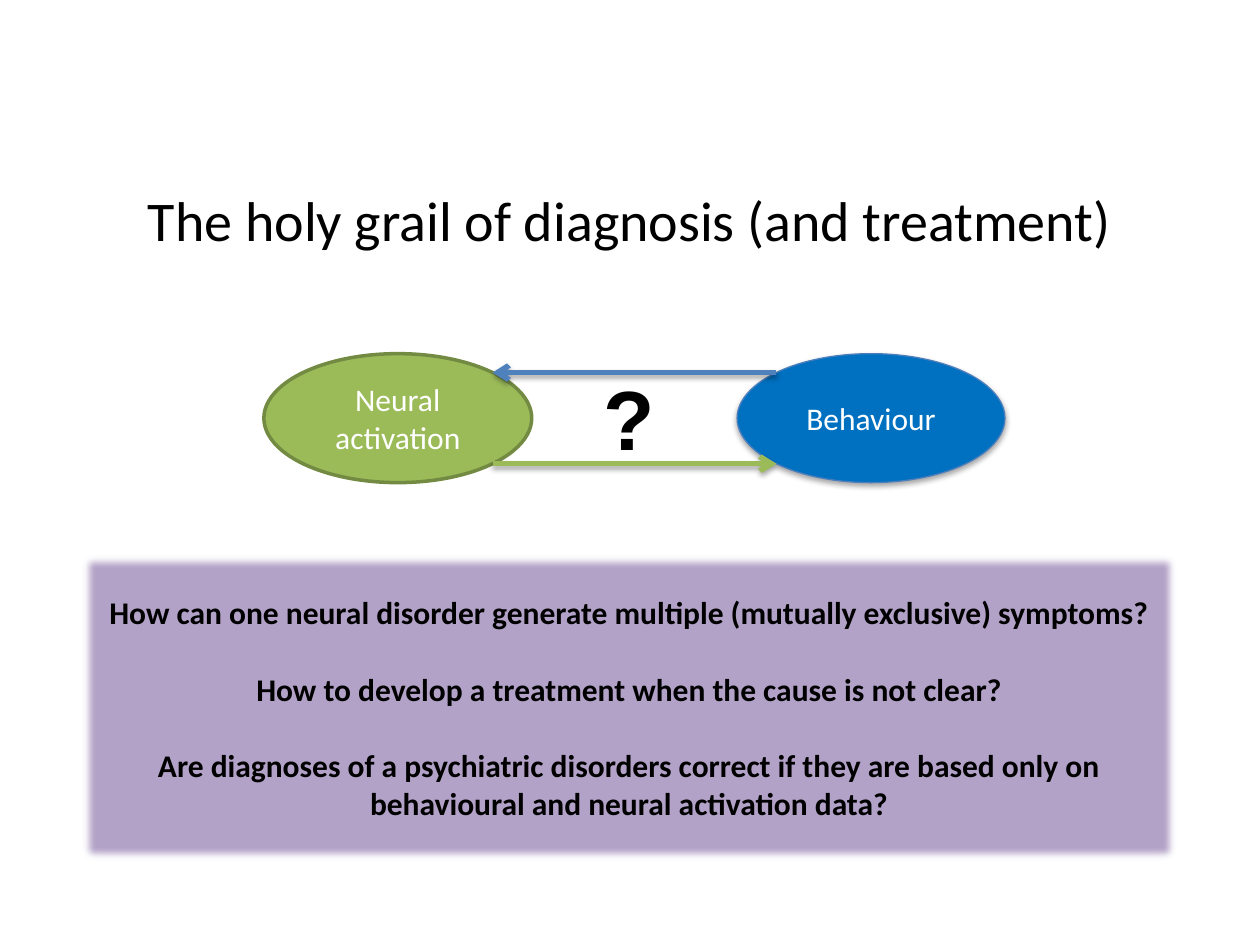
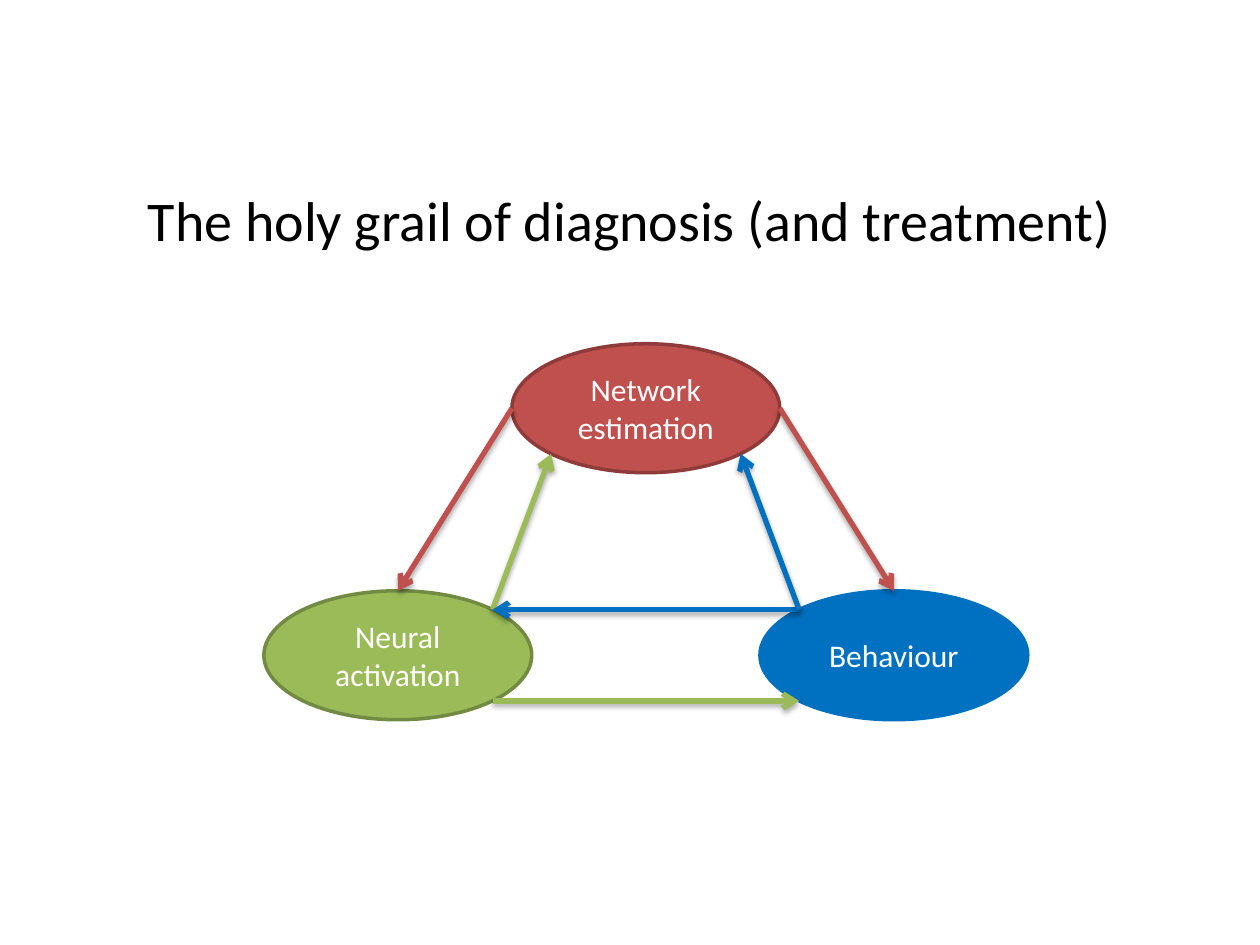
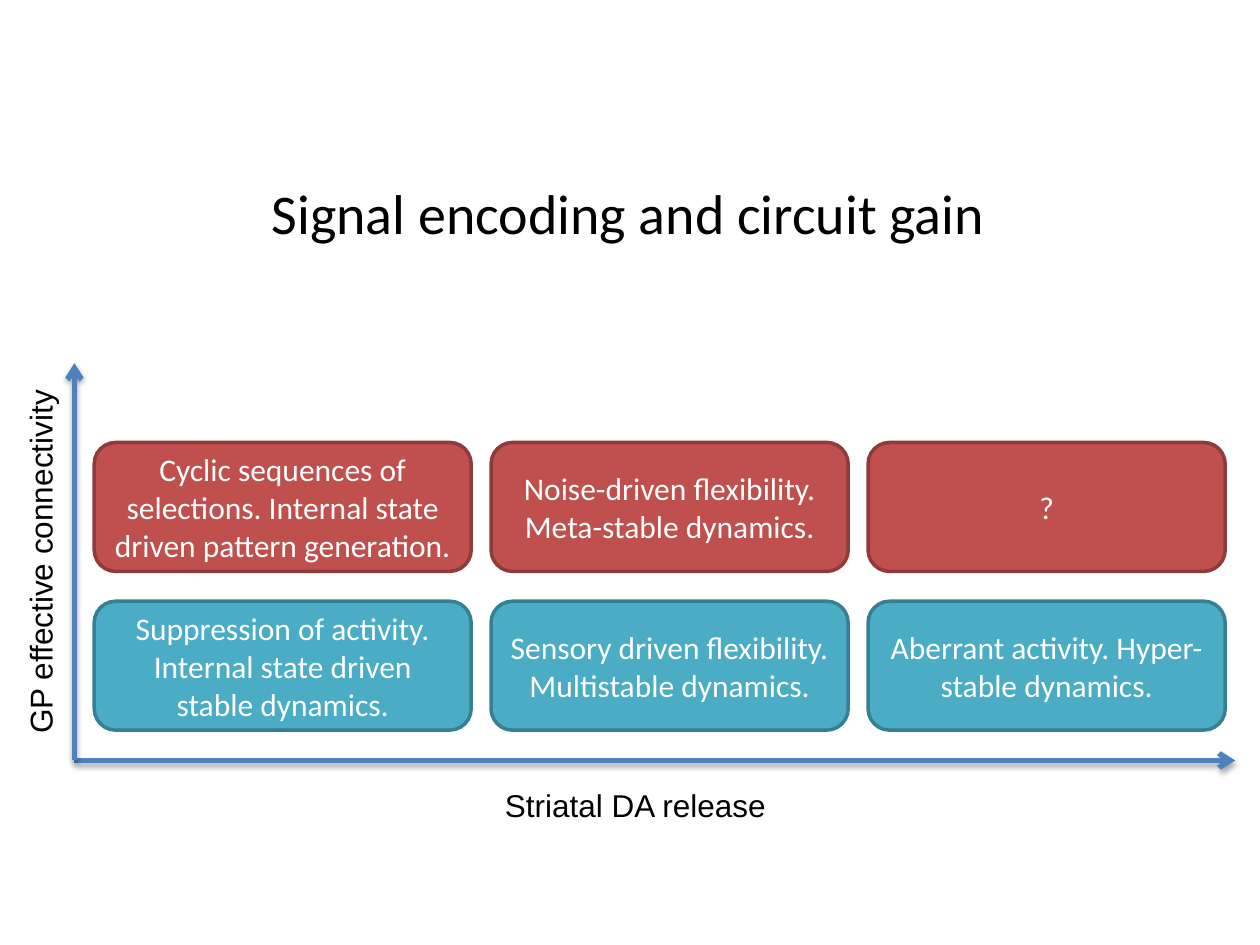
from lxml import etree
from pptx import Presentation
from pptx.dml.color import RGBColor
from pptx.enum.shapes import MSO_CONNECTOR, MSO_SHAPE
from pptx.enum.text import MSO_ANCHOR, PP_ALIGN
from pptx.oxml.ns import qn
from pptx.util import Cm, Pt

OVAL = MSO_SHAPE.OVAL
RECT = MSO_SHAPE.RECTANGLE
ROUND = MSO_SHAPE.ROUNDED_RECTANGLE
STRAIGHT = MSO_CONNECTOR.STRAIGHT
CENTER = PP_ALIGN.CENTER
TOP, MIDDLE = MSO_ANCHOR.TOP, MSO_ANCHOR.MIDDLE

BLACK, WHITE, LILAC = "000000", "FFFFFF", "B3A2C7"
BLUE, STEEL = "0070C0", "4F81BD"
GREEN, MOSS = "9BBB59", "738A42"
RED, WINE = "C0504D", "8E3B39"
TEAL, DEEP = "4BACC6", "377F92"

# All lengths are in centimetres
GRAIL = "The holy grail of diagnosis (and treatment)"
GRAIL_BOX = (1.27, 3.1, 22.86, 2.62)
GAIN = "Signal encoding and circuit gain"
GAIN_BOX = (0.91, 2.51, 23.52, 3.53)

ASKS = [
    "How can one neural disorder generate multiple (mutually exclusive) symptoms?",
    "How to develop a treatment when the cause is not clear?",
    "Are diagnoses of a psychiatric disorders correct if they are based only on "
    "behavioural and neural activation data?",
]

# Ovals: name -> lines of text, fill, edge
NODES = {
    "neural": (["Neural activation"], GREEN, MOSS),
    "behave": (["Behaviour"], BLUE, BLUE),
    "net": (["Network", "estimation"], RED, WINE),
}
NODE_W, NODE_H = 5.4, 2.6

# Centres of the ovals, then arrows: from, side, to, side, colour
PAIR = {"behave": (17.56, 8.43), "neural": (8.02, 8.43)}
PAIR_LINKS = [
    ("neural", "se", "behave", "sw", GREEN),
    ("behave", "nw", "neural", "ne", STEEL),
]
TRIO = {"net": (13.02, 8.23), "neural": (8.02, 13.21), "behave": (18.02, 13.21)}
TRIO_LINKS = [
    ("neural", "ne", "net", "sw", GREEN),
    ("neural", "se", "behave", "sw", GREEN),
    ("behave", "nw", "neural", "ne", BLUE),
    ("behave", "nw", "net", "se", BLUE),
    ("net", "w", "neural", "n", RED),
    ("net", "e", "behave", "n", RED),
]
DIAG = 0.5 ** 0.5
SIDES = {
    "n": (0, -1), "e": (1, 0), "w": (-1, 0),
    "ne": (DIAG, -DIAG), "nw": (-DIAG, -DIAG),
    "se": (DIAG, DIAG), "sw": (-DIAG, DIAG),
}

# Grid of states: fill, edge, cells
ROWS = [
    (RED, WINE, [
        "Cyclic sequences of selections. Internal state driven pattern generation.",
        "Noise-driven flexibility. Meta-stable dynamics.",
        "?",
    ]),
    (TEAL, DEEP, [
        "Suppression of activity. Internal state driven stable dynamics.",
        "Sensory driven flexibility. Multistable dynamics.",
        "Aberrant activity. Hyper-stable dynamics.",
    ]),
]
COLS = [7.6, 7.2, 7.2]
GRID_X, GRID_Y, CELL_H = 1.9, 8.92, 2.6
GAP_X, GAP_Y = 0.4, 0.6
ORIGIN = (1.5, 15.33)
AXES = [(24.9, 15.33), (1.5, 7.32)]
LABELS = [
    ("Striatal DA release", (9.91, 15.73, 5.8, 1.02), 0),
    ("GP effective connectivity", (-2.95, 10.82, 7.52, 1.02), 270),
]


def rgb(code):
    return RGBColor.from_string(code)


def cms(vals):
    return [Cm(val) for val in vals]


def write(shape, lines, size=18, color=WHITE, font="Calibri", bold=False,
          gap=0, anchor=MIDDLE, wrap=True):
    frame = shape.text_frame
    frame.word_wrap = wrap
    frame.vertical_anchor = anchor
    frame.text = "\n".join(lines)
    for num, para in enumerate(frame.paragraphs):
        para.alignment = CENTER
        para.space_before = Pt(gap if num else 0)
        para.font.size = Pt(size)
        para.font.name = font
        para.font.bold = bold
        para.font.color.rgb = rgb(color)


def effect(shape, tag, **attrs):
    """Give the shape an effect list with one effect, and return the effect."""
    props = shape._element.spPr
    for old in props.findall(qn("a:effectLst")):
        props.remove(old)
    group = etree.SubElement(props, qn("a:effectLst"))
    return etree.SubElement(group, qn(tag), **attrs)


def shade(shape):
    drop = effect(shape, "a:outerShdw", blurRad="40000", dist="23000",
                  dir="5400000", rotWithShape="0")
    tone = etree.SubElement(drop, qn("a:srgbClr"), val=BLACK)
    etree.SubElement(tone, qn("a:alpha"), val="35000")


def block(slide, kind, box, fill, edge=None, width=2):
    shape = slide.shapes.add_shape(kind, *cms(box))
    shape.shadow.inherit = False
    shape.fill.solid()
    shape.fill.fore_color.rgb = rgb(fill)
    if edge:
        shape.line.color.rgb = rgb(edge)
        shape.line.width = Pt(width)
    else:
        shape.line.fill.background()
    return shape


def label(slide, text, box, turn=0, **form):
    shape = slide.shapes.add_textbox(*cms(box))
    shape.rotation = turn
    write(shape, [text], color=BLACK, font="Arial", anchor=TOP, wrap=False, **form)


def arrow(slide, start, end, color):
    link = slide.shapes.add_connector(STRAIGHT, *cms(start + end))
    link.line.color.rgb = rgb(color)
    link.line.width = Pt(3)
    etree.SubElement(link.line._get_or_add_ln(), qn("a:tailEnd"), type="arrow")
    shade(link)


def start(deck, text, box):
    """Add a slide with its title."""
    slide = deck.slides.add_slide(deck.slide_layouts[5])
    title = slide.shapes.title
    title.left, title.top, title.width, title.height = cms(box)
    write(title, [text], size=32, color=BLACK)
    return slide


def rim(center, side):
    """Point on an oval's edge."""
    (x, y), (dx, dy) = center, SIDES[side]
    return x + dx * NODE_W / 2, y + dy * NODE_H / 2


def graph(slide, spots, links):
    """Draw ovals and arrows, and return the ovals by name."""
    ovals = {}
    for name, (x, y) in spots.items():
        lines, fill, edge = NODES[name]
        box = (x - NODE_W / 2, y - NODE_H / 2, NODE_W, NODE_H)
        ovals[name] = block(slide, OVAL, box, fill, edge)
        write(ovals[name], lines)
    for head, out, tail, into, color in links:
        arrow(slide, rim(spots[head], out), rim(spots[tail], into), color)
    return ovals


def pair_slide(deck):
    slide = start(deck, GRAIL, GRAIL_BOX)
    panel = block(slide, RECT, (1.6, 11.13, 22.17, 6.27), LILAC)
    effect(panel, "a:softEdge", rad="63500")
    write(panel, ASKS, color=BLACK, bold=True, gap=22)
    behave = graph(slide, PAIR, PAIR_LINKS)["behave"]
    behave.line.color.rgb = rgb("4B7EBC")
    behave.line.width = Pt(0.75)
    shade(behave)
    label(slide, "?", (11.91, 7.26, 1.55, 2.31), size=48, bold=True)


def trio_slide(deck):
    graph(start(deck, GRAIL, GRAIL_BOX), TRIO, TRIO_LINKS)


def gain_slide(deck):
    slide = start(deck, GAIN, GAIN_BOX)
    for row, (fill, edge, cells) in enumerate(ROWS):
        x, y = GRID_X, GRID_Y + row * (CELL_H + GAP_Y)
        for text, width in zip(cells, COLS):
            write(block(slide, ROUND, (x, y, width, CELL_H), fill, edge), [text])
            x += width + GAP_X
    for end in AXES:
        arrow(slide, ORIGIN, end, STEEL)
    for text, box, turn in LABELS:
        label(slide, text, box, turn)


def main():
    deck = Presentation()
    deck.slide_width, deck.slide_height = Cm(25.4), Cm(19.05)
    pair_slide(deck)
    trio_slide(deck)
    gain_slide(deck)
    deck.save("out.pptx")


if __name__ == "__main__":
    main()
